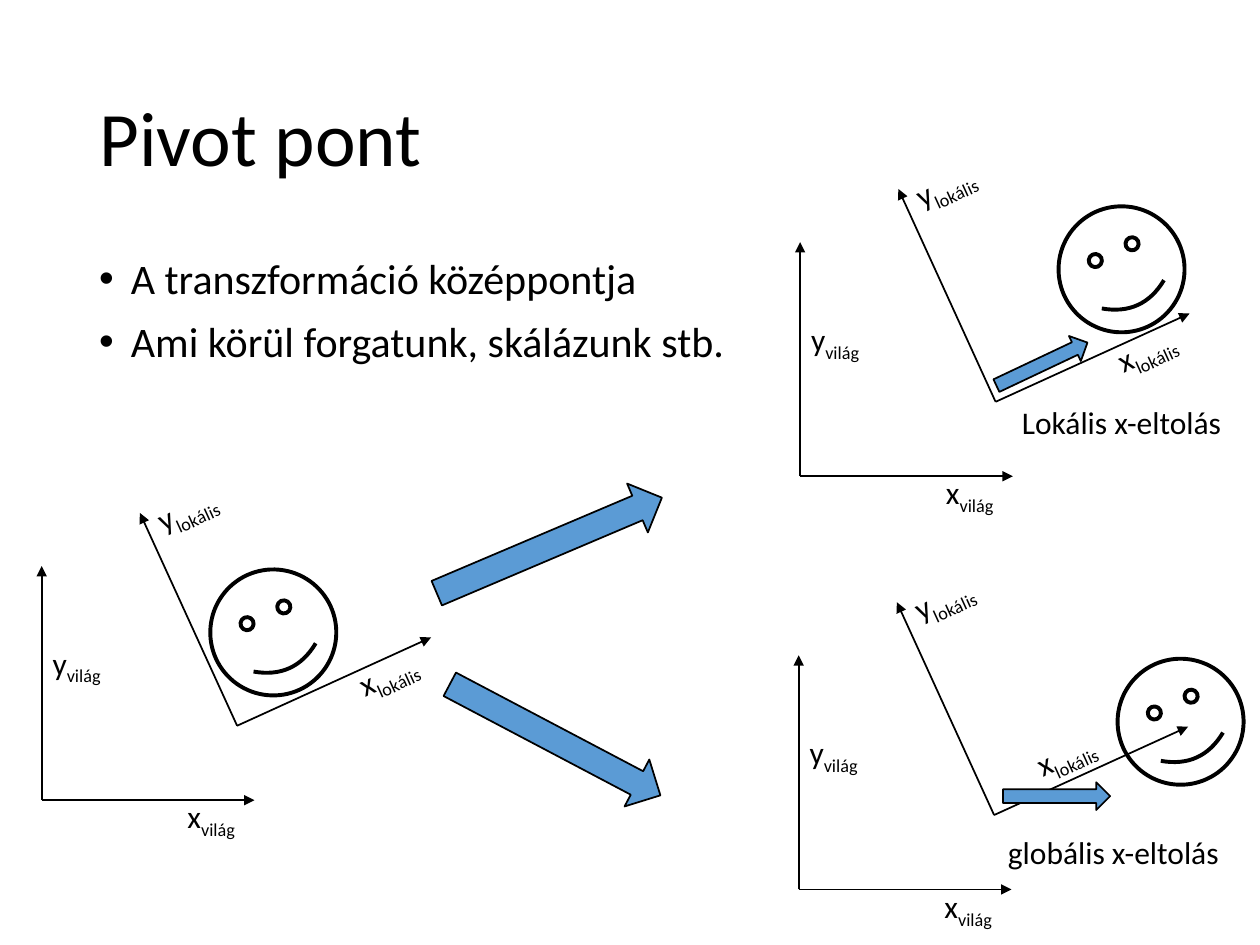
from lxml import etree
from pptx import Presentation
from pptx import util as u
from pptx.dml.color import RGBColor
from pptx.enum import shapes, text
from pptx.oxml.ns import qn

Cm, Pt = u.Cm, u.Pt
hues = {"ink": "000000", "blue": "5B9BD5"}
ink = RGBColor.from_string(hues["ink"])
tilt = 335.5

prs = Presentation()
prs.slide_width, prs.slide_height = Cm(25.4), Cm(19.05)
slide = prs.slides.add_slide(prs.slide_layouts[5])
pool = slide.shapes


def write(par, words, size=18, sub=""):
    """Fill a paragraph, with an optional subscript at its end."""
    for part, base in ((words, 0), (sub, -25000)):
        if part:
            run = par.add_run()
            run.text = part
            look = {"name": "Calibri", "size": Pt(size)}
            for key, val in look.items():
                setattr(run.font, key, val)
            run.font.color.rgb = ink
            if base:
                run._r.get_or_add_rPr().set("baseline", str(base))


def label(x, y, wide, words, sub="", turn=0):
    """Place a one-line label."""
    box = pool.add_textbox(Cm(x), Cm(y), Cm(wide), Cm(1.02))
    box.rotation = turn
    box.text_frame.word_wrap = True
    write(box.text_frame.paragraphs[0], words, sub=sub)


# Title
title = pool.title
place = {"left": Cm(1.75), "top": Cm(1.02), "width": Cm(21.9), "height": Cm(3.68)}
for key, val in place.items():
    setattr(title, key, val)
title.text_frame.vertical_anchor = text.MSO_ANCHOR.MIDDLE
par = title.text_frame.paragraphs[0]
par.alignment, par.line_spacing = text.PP_ALIGN.LEFT, 0.9
write(par, "Pivot pont", 44)

# Bullet list
body = pool.add_textbox(Cm(1.75), Cm(5.08), Cm(21.9), Cm(13.72)).text_frame
body.word_wrap = True
items = ["A transzformáció középpontja", "Ami körül forgatunk, skálázunk stb."]
for i, item in enumerate(items):
    par = body.add_paragraph() if i else body.paragraphs[0]
    form = {"line_spacing": 0.9, "space_before": Pt(10)}
    for key, val in form.items():
        setattr(par, key, val)
    props = par._p.get_or_add_pPr()
    props.set("marL", str(Cm(0.64)))
    props.set("indent", str(-Cm(0.64)))
    etree.SubElement(props, qn("a:buFont")).set("typeface", "Arial")
    etree.SubElement(props, qn("a:buChar")).set("char", "•")
    write(par, item, 24)

# Scenes: world origin, then face and local x label relative to it
scenes = [
    ((0.84, 16.13), (3.4, -4.65), (6.1, -3.12)),
    ((16.13, 9.6), (5.21, -5.44), (6.1, -3.12)),
    ((16.1, 17.93), (6.43, -4.65), (4.5, -3.3)),
]
for (x, y), (fx, fy), (lx, ly) in scenes:
    face = pool.add_shape(shapes.MSO_SHAPE.SMILEY_FACE,
                          Cm(x + fx), Cm(y + fy), Cm(2.54), Cm(2.54))
    face.rotation = tilt
    face.shadow.inherit = False
    face.fill.background()
    face.line.color.rgb, face.line.width = ink, Pt(2.25)

    # Axes: start, then reach
    px, py = x + 3.94, y - 1.5
    axes = [(px, py, -1.96, -4.29), (px, py, 3.91, -1.78),
            (x, y, 0, -4.72), (x, y, 4.29, 0)]
    for ax, ay, dx, dy in axes:
        axis = pool.add_connector(shapes.MSO_CONNECTOR.STRAIGHT,
                                  Cm(ax), Cm(ay), Cm(ax + dx), Cm(ay + dy))
        axis.line.color.rgb, axis.line.width = ink, Pt(1)
        line = axis.line._get_or_add_ln()
        etree.SubElement(line, qn("a:tailEnd")).set("type", "triangle")
        etree.SubElement(axis._element.spPr, qn("a:effectLst"))

    label(x + lx, y + ly, 2, "x", "lokális", tilt)
    label(x + 2.01, y - 6.58, 2.67, "y", "lokális", tilt)
    label(x + 2.69, y - 0.18, 1.6, "x", "világ")
    label(x - 0.03, y - 3.28, 2.34, "y", "világ")

# Block arrows: left, top, width, height, turn
blocks = [
    (8.79, 14.38, 4.8, 1.07, 27.8),
    (8.61, 10.46, 4.93, 1.07, 337),
    (19.99, 7.06, 2.03, 0.56, 334.7),
    (20.22, 15.77, 2.16, 0.56, 0),
]
for *spot, turn in blocks:
    block = pool.add_shape(shapes.MSO_SHAPE.RIGHT_ARROW, *map(Cm, spot))
    block.rotation = turn
    block.shadow.inherit = False
    block.fill.solid()
    block.fill.fore_color.rgb = RGBColor.from_string(hues["blue"])
    block.line.color.rgb, block.line.width = ink, Pt(1)

# Captions
label(20.35, 8, 5.1, "Lokális x-eltolás")
label(20.07, 16.66, 5.1, "globális x-eltolás")

prs.save("out.pptx")
